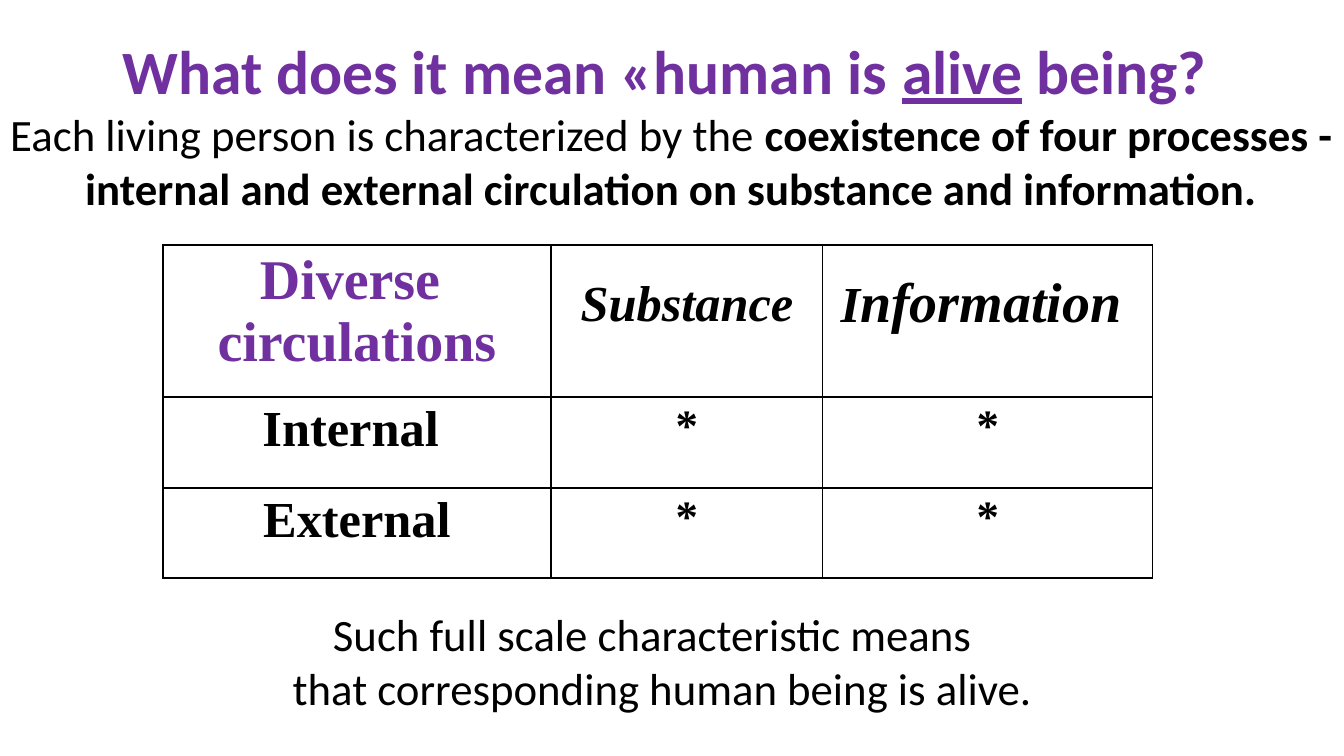
from lxml import etree
from pptx import Presentation
from pptx import util as u
from pptx.dml.color import RGBColor
from pptx.enum import text
from pptx.oxml import ns

PURPLE = RGBColor(0x70, 0x30, 0xA0)
BLACK = RGBColor(0, 0, 0)
SANS = "Calibri"
SERIF = "Times New Roman"
PX_PER_INCH = 100.8

COLUMN_WIDTHS = (388, 272, 330)
ROW_HEIGHTS = (152, 91, 90)
CELL_MARGIN = 5
STAR = (0, [[("*", 32)]], BLACK, False)
ROWS = (
    (
        (0, [[("Diverse ", 40)], [("circulations", 40)]], PURPLE, False),
        (27, [[("Substance", 36)]], BLACK, True),
        (23, [[("I", 36), ("nformation ", 40)]], BLACK, True),
    ),
    ((0, [[("Internal ", 36)]], BLACK, False), STAR, STAR),
    ((0, [[("External", 36)]], BLACK, False), STAR, STAR),
)


def px(length):
    return u.Inches(length / PX_PER_INCH)


def place(shape, box):
    shape.left, shape.top, shape.width, shape.height = map(px, box)


def add_span(para, words, size, font, color, bold=False, italic=False, underline=False):
    span = para.add_run()
    span.text = words
    span.font.size = u.Pt(size)
    span.font.name = font
    span.font.color.rgb = color
    span.font.bold = bold
    span.font.italic = italic
    span.font.underline = underline


def centred_paragraphs(frame, count):
    paras = [frame.paragraphs[0]] + [frame.add_paragraph() for _ in range(count - 1)]
    for para in paras:
        para.alignment = text.PP_ALIGN.CENTER
    return paras


def set_up_frame(frame):
    frame.word_wrap = True
    frame.auto_size = text.MSO_AUTO_SIZE.NONE
    frame.vertical_anchor = text.MSO_ANCHOR.TOP


def add_heading(page, box):
    title = page.shapes.title
    place(title, box)
    set_up_frame(title.text_frame)
    question, statement = centred_paragraphs(title.text_frame, 2)
    for words, underline in (
        ("What does it mean «human is ", False),
        ("alive", True),
        (" being? ", False),
    ):
        add_span(question, words, 44, SANS, PURPLE, bold=True, underline=underline)
    add_span(statement, "Each living person is characterized by the ", 32, SANS, BLACK)
    add_span(
        statement,
        "coexistence of four processes - internal and external circulation "
        "on substance and information.",
        32, SANS, BLACK, bold=True,
    )


def add_borders(cell):
    properties = cell._tc.get_or_add_tcPr()
    for index, side in enumerate(("lnL", "lnR", "lnT", "lnB")):
        line = etree.Element(ns.qn("a:" + side), w=str(u.Pt(1)))
        fill = etree.SubElement(line, ns.qn("a:solidFill"))
        etree.SubElement(fill, ns.qn("a:srgbClr"), val=str(BLACK))
        properties.insert(index, line)


def fill_cell(cell, offset, lines, color, italic):
    cell.fill.background()
    add_borders(cell)
    cell.margin_top = px(CELL_MARGIN + offset)
    for para, spans in zip(centred_paragraphs(cell.text_frame, len(lines)), lines):
        for words, size in spans:
            add_span(para, words, size, SERIF, color, bold=True, italic=italic)


def add_circulations(page, box):
    table = page.shapes.add_table(len(ROWS), len(COLUMN_WIDTHS), *map(px, box)).table
    table.first_row = False
    table.horz_banding = False
    for column, width in zip(table.columns, COLUMN_WIDTHS):
        column.width = px(width)
    for row, height, contents in zip(table.rows, ROW_HEIGHTS, ROWS):
        row.height = px(height)
        for cell, content in zip(row.cells, contents):
            fill_cell(cell, *content)


def add_conclusion(page, box):
    frame = page.shapes.add_textbox(*map(px, box)).text_frame
    set_up_frame(frame)
    lines = (
        "Such full scale characteristic means ",
        " that corresponding human being is alive.",
    )
    for para, words in zip(centred_paragraphs(frame, len(lines)), lines):
        add_span(para, words, 32, SANS, BLACK)


def main():
    deck = Presentation()
    deck.slide_width = px(1344)
    deck.slide_height = px(756)
    page = deck.slides.add_slide(deck.slide_layouts[5])
    add_heading(page, (-3, 28, 1349, 194))
    add_circulations(page, (163, 245, sum(COLUMN_WIDTHS), sum(ROW_HEIGHTS)))
    add_conclusion(page, (245, 602, 825, 119))
    deck.save("out.pptx")


if __name__ == "__main__":
    main()
